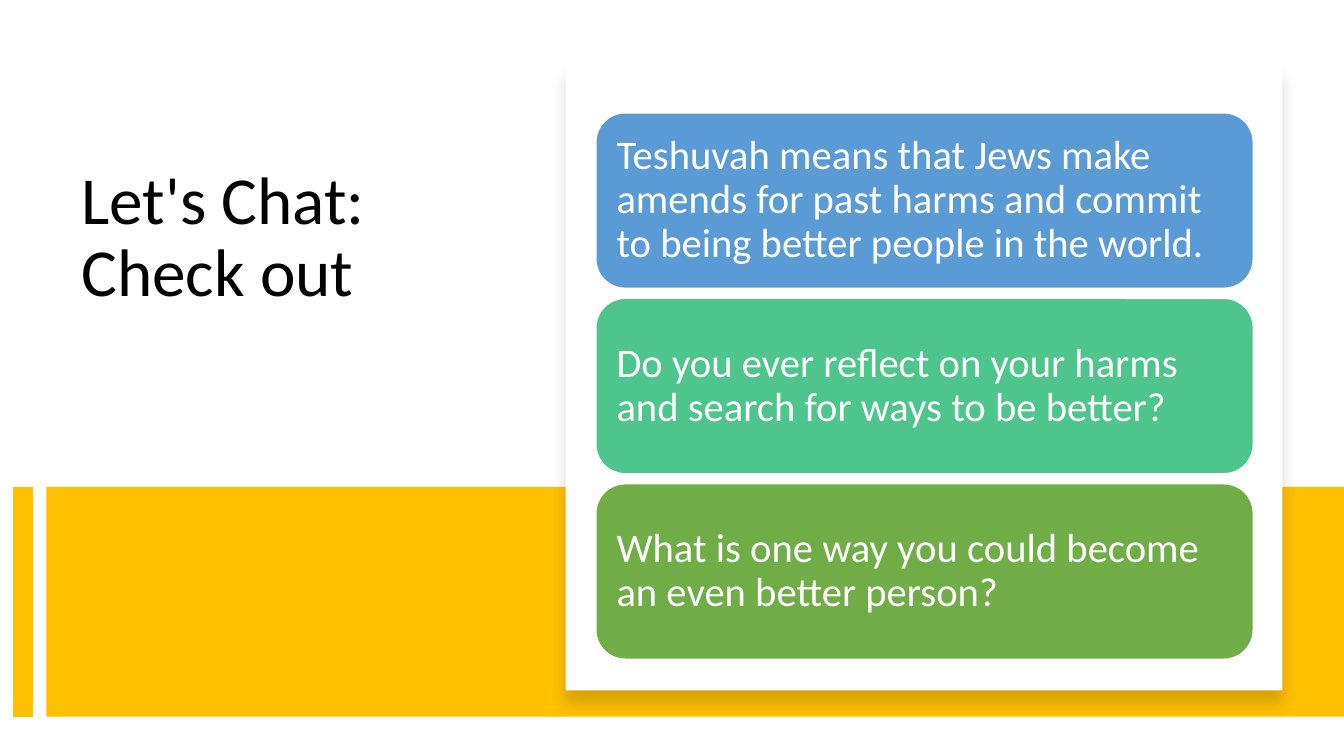
from lxml.etree import SubElement
from pptx import Presentation
from pptx.dml.color import RGBColor
from pptx.enum.shapes import MSO_CONNECTOR, MSO_SHAPE
from pptx.enum.text import MSO_ANCHOR, PP_ALIGN
from pptx.oxml.ns import qn
from pptx.util import Inches, Pt

WHITE = RGBColor(0xFF, 0xFF, 0xFF)
BLACK = RGBColor(0x00, 0x00, 0x00)
GOLD = RGBColor(0xFF, 0xC0, 0x00)
BLUE = RGBColor(0x5B, 0x9B, 0xD5)
TEAL = RGBColor(0x4D, 0xC5, 0x8D)
GREEN = RGBColor(0x70, 0xAD, 0x47)

TITLE = "Let's Chat: Check out"
CARDS = [
    ("Teshuvah means that Jews make amends for past harms and commit "
     "to being better people in the world.", BLUE),
    ("Do you ever reflect on your harms and search for ways to be better?", TEAL),
    ("What is one way you could become an even better person?", GREEN),
]

SLIDE_WIDTH, SLIDE_HEIGHT = 13.33, 7.5
BAND_LEFT, BAND_TOP, BAND_HEIGHT = 0.46, 4.83, 2.28
STRIPE_X = 0.23
CARD_LEFT, CARD_TOP, CARD_WIDTH, CARD_HEIGHT = 5.91, 1.12, 6.52, 1.74
CARD_STEP = 1.84


def add_box(page, preset, left, top, width, height, color):
    box = page.shapes.add_shape(
        preset, Inches(left), Inches(top), Inches(width), Inches(height))
    box.shadow.inherit = False
    box.fill.solid()
    box.fill.fore_color.rgb = color
    box.line.fill.background()
    return box


def write(frame, text, size, color):
    frame.word_wrap = True
    frame.text = text
    para = frame.paragraphs[0]
    para.alignment = PP_ALIGN.LEFT
    para.line_spacing = 0.9
    font = para.runs[0].font
    font.name = "Calibri"
    font.size = Pt(size)
    font.color.rgb = color


def add_soft_shadow(box):
    effects = box._element.spPr.find(qn("a:effectLst"))
    shadow = SubElement(effects, qn("a:outerShdw"), blurRad=str(Pt(11)),
                        dist=str(Pt(10)), dir="5400000", algn="t", rotWithShape="0")
    color = SubElement(shadow, qn("a:srgbClr"), val=str(BLACK))
    SubElement(color, qn("a:alpha"), val="15000")


def add_title(page):
    title = page.shapes.add_textbox(Inches(0.71), Inches(1.6), Inches(4.15), Inches(2.94))
    write(title.text_frame, TITLE, 48, BLACK)


def add_band(page):
    add_box(page, MSO_SHAPE.RECTANGLE, BAND_LEFT, BAND_TOP,
            SLIDE_WIDTH - BAND_LEFT, BAND_HEIGHT, GOLD)
    stripe = page.shapes.add_connector(
        MSO_CONNECTOR.STRAIGHT, Inches(STRIPE_X), Inches(BAND_TOP),
        Inches(STRIPE_X), Inches(BAND_TOP + BAND_HEIGHT))
    stripe.line.color.rgb = GOLD
    stripe.line.width = Pt(14)
    SubElement(stripe._element.spPr, qn("a:effectLst"))


def add_cards(page):
    panel = add_box(page, MSO_SHAPE.RECTANGLE, 5.61, 0.64, 7.11, 6.21, WHITE)
    add_soft_shadow(panel)
    for index, (text, color) in enumerate(CARDS):
        card = add_box(page, MSO_SHAPE.ROUNDED_RECTANGLE, CARD_LEFT,
                       CARD_TOP + index * CARD_STEP, CARD_WIDTH, CARD_HEIGHT, color)
        card.line.color.rgb = WHITE
        card.line.width = Pt(1)
        frame = card.text_frame
        # A rounded rectangle already insets its text by about 0.08 inches.
        frame.margin_left = frame.margin_right = Inches(0.12)
        frame.margin_top = frame.margin_bottom = Inches(0.12)
        frame.vertical_anchor = MSO_ANCHOR.MIDDLE
        write(frame, text, 29, WHITE)


def main():
    deck = Presentation()
    deck.slide_width = Inches(SLIDE_WIDTH)
    deck.slide_height = Inches(SLIDE_HEIGHT)
    page = deck.slides.add_slide(deck.slide_layouts[6])
    add_title(page)
    add_band(page)
    add_cards(page)
    deck.save("out.pptx")


if __name__ == "__main__":
    main()
